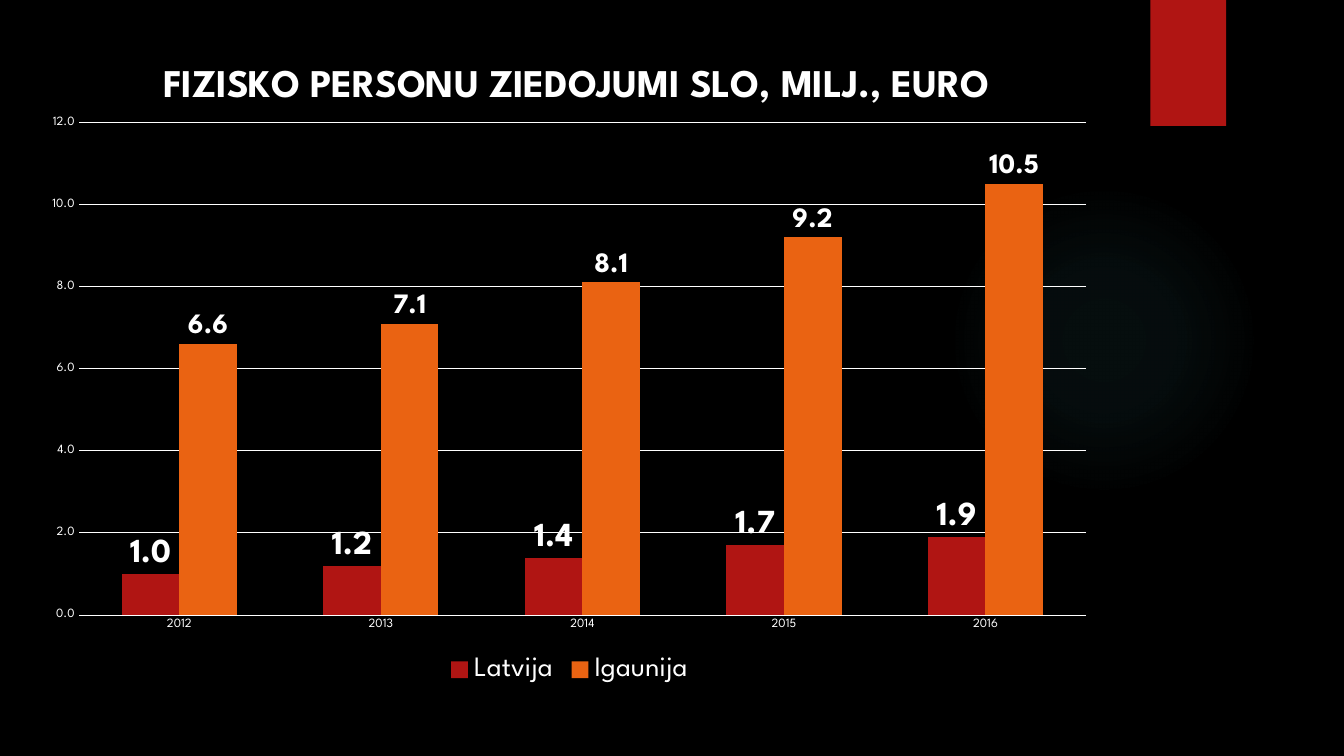
from dataclasses import dataclass

from lxml import etree
from pptx import Presentation
from pptx.chart.chart import Chart
from pptx.chart.data import CategoryChartData
from pptx.dml.color import RGBColor
from pptx.enum.chart import XL_CHART_TYPE, XL_LABEL_POSITION, XL_LEGEND_POSITION, XL_TICK_MARK
from pptx.enum.shapes import MSO_SHAPE
from pptx.oxml import parse_xml
from pptx.oxml.ns import qn
from pptx.shapes.autoshape import Shape
from pptx.slide import Slide
from pptx.text.text import Font
from pptx.util import Pt

COLUMNS = XL_CHART_TYPE.COLUMN_CLUSTERED
OUTSIDE_END = XL_LABEL_POSITION.OUTSIDE_END
BOTTOM = XL_LEGEND_POSITION.BOTTOM
NO_TICK = XL_TICK_MARK.NONE
RECTANGLE, ELLIPSE = MSO_SHAPE.RECTANGLE, MSO_SHAPE.OVAL

BLACK = RGBColor(0x00, 0x00, 0x00)
WHITE = RGBColor(0xFF, 0xFF, 0xFF)
RED = RGBColor(0xB0, 0x15, 0x13)
ORANGE = RGBColor(0xEA, 0x63, 0x12)
TEAL = RGBColor(0x50, 0xB9, 0xC1)

FONT_NAME = "League Spartan"
NUMBER_FORMAT = "#,##0.0"
TITLE = "FIZISKO PERSONU ZIEDOJUMI SLO, MILJ., EURO"
YEARS = ["2012", "2013", "2014", "2015", "2016"]
DRAWING_NS = "http://schemas.openxmlformats.org/drawingml/2006/main"


@dataclass(frozen=True)
class Box:
    left: float
    top: float
    width: float
    height: float

    def lengths(self) -> tuple[Pt, Pt, Pt, Pt]:
        return Pt(self.left), Pt(self.top), Pt(self.width), Pt(self.height)


@dataclass(frozen=True)
class Country:
    name: str
    donations: tuple[float, ...]
    color: RGBColor
    label_size: int


@dataclass(frozen=True)
class GlowStop:
    position: int
    opacity: int


COUNTRIES = [
    Country("Latvija", (1, 1.2, 1.4, 1.7, 1.9), RED, 24),
    Country("Igaunija", (6.6, 7.1, 8.1, 9.2, 10.5), ORANGE, 20),
]
GLOW_STOPS = [GlowStop(0, 7), GlowStop(36, 6), GlowStop(69, 0)]


def style_font(font: Font, size: float, bold: bool = False) -> None:
    font.name, font.size, font.bold = FONT_NAME, Pt(size), bold
    font.color.rgb = WHITE


def add_plain_shape(slide: Slide, kind: MSO_SHAPE, box: Box) -> Shape:
    shape = slide.shapes.add_shape(kind, *box.lengths())
    shape.shadow.inherit = False
    shape.line.fill.background()
    return shape


def add_glow(slide: Slide, box: Box) -> None:
    shape = add_plain_shape(slide, ELLIPSE, box)
    shape.fill.background()
    stops = "".join(
        f'<a:gs pos="{stop.position * 1000}"><a:srgbClr val="{TEAL}">'
        f'<a:alpha val="{stop.opacity * 1000}"/></a:srgbClr></a:gs>'
        for stop in GLOW_STOPS
    )
    gradient = parse_xml(
        f'<a:gradFill xmlns:a="{DRAWING_NS}"><a:gsLst>{stops}</a:gsLst><a:path path="circle">'
        '<a:fillToRect l="50000" t="50000" r="50000" b="50000"/></a:path></a:gradFill>'
    )
    properties = shape.element.spPr
    properties.replace(properties.find(qn("a:noFill")), gradient)


def set_layout(parent: etree.ElementBase, index: int, settings: dict[str, str | float]) -> None:
    """Place a chart part by fractions of the chart area."""
    for old_layout in parent.findall(qn("c:layout")):
        parent.remove(old_layout)
    layout = etree.Element(qn("c:layout"))
    manual = etree.SubElement(layout, qn("c:manualLayout"))
    for tag, value in settings.items():
        etree.SubElement(manual, qn(f"c:{tag}")).set("val", str(value))
    parent.insert(index, layout)


def style_title(chart: Chart) -> None:
    chart.has_title = True
    run = chart.chart_title.text_frame.paragraphs[0].add_run()
    run.text = TITLE
    style_font(run.font, 28, bold=True)
    set_layout(chart.chart_title.element, 1, {"xMode": "edge", "yMode": "edge", "x": 0.116, "y": 0.03})


def style_axes(chart: Chart) -> None:
    for axis in (chart.category_axis, chart.value_axis):
        axis.major_tick_mark = axis.minor_tick_mark = NO_TICK
        axis.format.line.fill.background()
        style_font(axis.tick_labels.font, 9)
    values = chart.value_axis
    values.minimum_scale, values.maximum_scale, values.major_unit = 0, 12, 2
    values.tick_labels.number_format = NUMBER_FORMAT
    values.tick_labels.number_format_is_linked = False
    grid_line = values.major_gridlines.format.line
    grid_line.color.rgb, grid_line.width = WHITE, Pt(0.75)


def style_columns(chart: Chart) -> None:
    plot = chart.plots[0]
    plot.gap_width, plot.overlap, plot.vary_by_categories = 150, 0, False
    for series, country in zip(plot.series, COUNTRIES):
        series.format.fill.solid()
        series.format.fill.fore_color.rgb = country.color
        series.invert_if_negative = False
        labels = series.data_labels
        labels.show_value, labels.position = True, OUTSIDE_END
        labels.number_format, labels.number_format_is_linked = NUMBER_FORMAT, False
        style_font(labels.font, country.label_size, bold=True)


def add_donation_chart(slide: Slide, box: Box) -> None:
    data = CategoryChartData(number_format=NUMBER_FORMAT)
    data.categories = YEARS
    for country in COUNTRIES:
        data.add_series(country.name, country.donations)
    chart = slide.shapes.add_chart(COLUMNS, *box.lengths(), data).chart
    style_font(chart.font, 10)
    style_title(chart)
    style_axes(chart)
    style_columns(chart)

    # Legend and plot area
    chart.has_legend = True
    chart.legend.position, chart.legend.include_in_layout = BOTTOM, False
    style_font(chart.legend.font, 20)
    plot_area = chart.element.find(f".//{qn('c:plotArea')}")
    set_layout(plot_area, 0, {
        "layoutTarget": "inner", "xMode": "edge", "yMode": "edge",
        "x": 0.044, "y": 0.128, "w": 0.936, "h": 0.759,
    })


def main() -> None:
    presentation = Presentation()
    presentation.slide_width, presentation.slide_height = Pt(960), Pt(540)
    slide = presentation.slides.add_slide(presentation.slide_layouts[6])

    # Background, glow and red tab
    slide.background.fill.solid()
    slide.background.fill.fore_color.rgb = BLACK
    add_glow(slide, Box(677.5, 131.8, 221.8, 221.8))
    tab = add_plain_shape(slide, RECTANGLE, Box(821.8, 0, 54, 90))
    tab.fill.solid()
    tab.fill.fore_color.rgb = RED

    # Donations by year
    add_donation_chart(slide, Box(22.3, 28.1, 769, 463.7))
    presentation.save("out.pptx")


if __name__ == "__main__":
    main()
